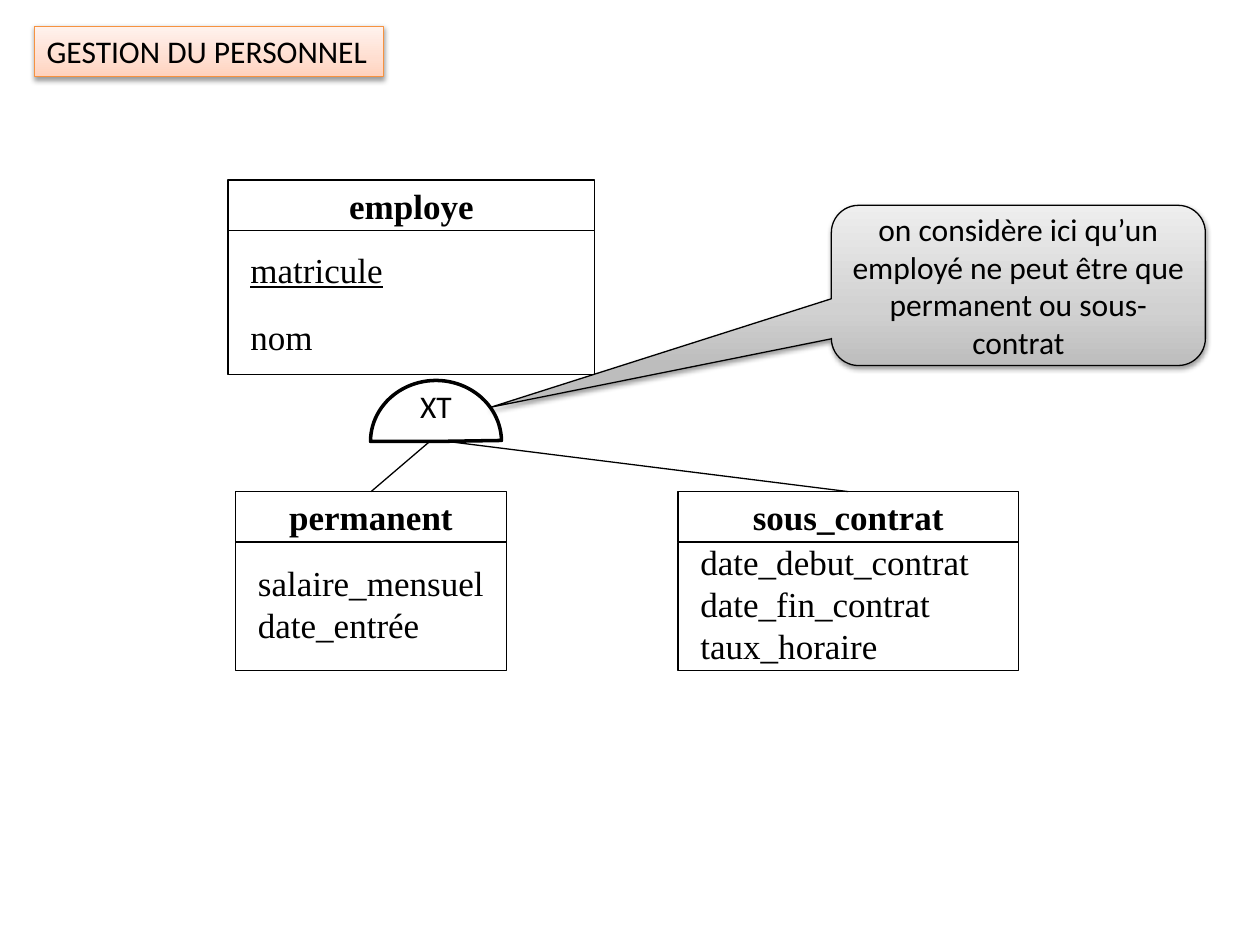
from lxml.etree import SubElement
from pptx import Presentation
from pptx.dml.color import RGBColor
from pptx.enum.shapes import MSO_CONNECTOR, MSO_SHAPE
from pptx.enum.text import MSO_ANCHOR, MSO_AUTO_SIZE, PP_ALIGN
from pptx.oxml import parse_xml
from pptx.oxml.ns import nsdecls, qn
from pptx.util import Cm, Pt

SERIF, SANS = "Times New Roman", "Calibri"
HEADER_H, PAD, GAP = 1.02, 0.18, 0.16


def rgb(value):
    """Turn a hex string into a colour."""
    return RGBColor.from_string(value)


def add_box(shapes, kind, box, fill="FFFFFF", line="000000", width=0.75, alpha=None):
    """Add a shape with a plain fill, an optional line and no shadow."""
    sp = shapes.add_shape(kind, *map(Cm, box))
    sp.shadow.inherit = False
    sp.fill.solid()
    sp.fill.fore_color.rgb = rgb(fill)
    if alpha:
        clr = sp._element.spPr.find(".//" + qn("a:srgbClr"))
        SubElement(clr, qn("a:alpha"), val=str(alpha * 1000))
    if line:
        sp.line.color.rgb = rgb(line)
        sp.line.width = Pt(width)
    else:
        sp.line.fill.background()
    return sp


def add_text(sp, lines, font, size, align=PP_ALIGN.CENTER, anchor=MSO_ANCHOR.MIDDLE,
             wrap=True, bold=None, underline=None):
    """Write one paragraph for each line."""
    tf = sp.text_frame
    tf.word_wrap = wrap
    tf.vertical_anchor = anchor
    for i, line in enumerate(lines):
        p = tf.add_paragraph() if i else tf.paragraphs[0]
        p.alignment = align
        r = p.add_run()
        r.text = line
        r.font.name, r.font.size = font, Pt(size)
        r.font.bold, r.font.underline = bold, underline
        r.font.color.rgb = rgb("000000")


def add_relief(sp, colours):
    """Give a shape an upward gradient and a soft shadow below."""
    stops = "".join(f'<a:gs pos="{pos}"><a:srgbClr val="{c}"/></a:gs>'
                    for pos, c in zip((0, 35000, 100000), colours))
    spPr = sp._element.spPr
    spPr.replace(spPr.find(qn("a:solidFill")), parse_xml(
        f'<a:gradFill {nsdecls("a")} rotWithShape="1"><a:gsLst>{stops}</a:gsLst>'
        '<a:lin ang="16200000" scaled="0"/></a:gradFill>'))
    spPr.find(qn("a:effectLst")).append(parse_xml(
        f'<a:outerShdw {nsdecls("a")} blurRad="{Pt(3.1)}" dist="{Pt(1.6)}" dir="5400000"'
        ' rotWithShape="0"><a:srgbClr val="000000"><a:alpha val="38000"/></a:srgbClr>'
        '</a:outerShdw>'))


def add_entity(s, box, name, blocks, block_h, key=None):
    """Draw an entity with its header and field blocks, and return the header."""
    x, y, w, h = box
    shapes = s.shapes.add_group_shape().shapes
    add_box(shapes, MSO_SHAPE.RECTANGLE, (x, y + HEADER_H, w, h - HEADER_H), alpha=50)
    header = add_box(shapes, MSO_SHAPE.RECTANGLE, (x, y, w, HEADER_H), alpha=50)
    add_text(header, [name], SERIF, 20, wrap=False, bold=True)
    for i, fields in enumerate(blocks):
        top = y + HEADER_H + PAD + i * (block_h + GAP)
        sp = add_box(shapes, MSO_SHAPE.RECTANGLE, (x + 0.2, top, w - 0.3, block_h),
                     line=None, alpha=50)
        add_text(sp, fields, SERIF, 20, PP_ALIGN.LEFT, wrap=False,
                 underline=True if key in fields else None)
    return header


def add_constraint(s, box, label, headers):
    """Draw the half-disc constraint and its links to the entity headers."""
    x, y, w, h = box
    for header in headers:
        line = s.shapes.add_connector(MSO_CONNECTOR.STRAIGHT, Cm(x + w / 2 - 0.08),
                                      Cm(y + h / 2 - 0.04), 0, 0)
        line.end_connect(header, 0)
        line.line.color.rgb = rgb("000000")
        line.line.width = Pt(0.75)
        SubElement(line._element.spPr, qn("a:effectLst"))
    sp = add_box(s.shapes, MSO_SHAPE.PIE, box, width=2)
    sp.adjustments[0], sp.adjustments[1] = 108, 215.48
    add_text(sp, [label], SANS, 18, anchor=MSO_ANCHOR.TOP)


def add_callout(s, box, text):
    """Draw the grey remark pointing at the constraint."""
    sp = add_box(s.shapes, MSO_SHAPE.ROUNDED_RECTANGULAR_CALLOUT, box)
    for i, value in enumerate((-1.41, 0.76, 0.17)):
        sp.adjustments[i] = value
    add_relief(sp, ("BDBDBD", "D1D1D1", "EEEEEE"))
    add_text(sp, [text], SANS, 18)


def add_title(s, box, text):
    """Draw the orange title label."""
    sp = add_box(s.shapes, MSO_SHAPE.RECTANGLE, box, line="F69240")
    add_relief(sp, ("FFD2BD", "FFDED0", "FFF2ED"))
    add_text(sp, [text], SANS, 18, PP_ALIGN.LEFT, MSO_ANCHOR.TOP, wrap=False)
    sp.text_frame.auto_size = MSO_AUTO_SIZE.SHAPE_TO_FIT_TEXT


def main():
    """Build the slide and save it."""
    prs = Presentation()
    prs.slide_width, prs.slide_height = Cm(25.4), Cm(19.05)
    s = prs.slides.add_slide(prs.slide_layouts[6])
    add_entity(s, (4.6, 3.63, 7.39, 3.92), "employe", [["matricule"], ["nom"]], 1.19,
               key="matricule")
    permanent = add_entity(s, (4.75, 9.91, 5.46, 3.61), "permanent",
                           [["salaire_mensuel", "date_entrée"]], 2.11)
    contract = add_entity(s, (13.67, 9.91, 6.86, 3.61), "sous_contrat",
                          [["date_debut_contrat", "date_fin_contrat", "taux_horaire"]], 2.11)
    add_constraint(s, (7.47, 7.67, 2.64, 2.46), "XT", (permanent, contract))
    add_callout(s, (16.76, 4.14, 7.54, 3.23),
                "on considère ici qu’un employé ne peut être que permanent ou sous-contrat")
    add_title(s, (0.69, 0.53, 7.04, 1.02), "GESTION DU PERSONNEL")
    prs.save("out.pptx")


if __name__ == "__main__":
    main()
